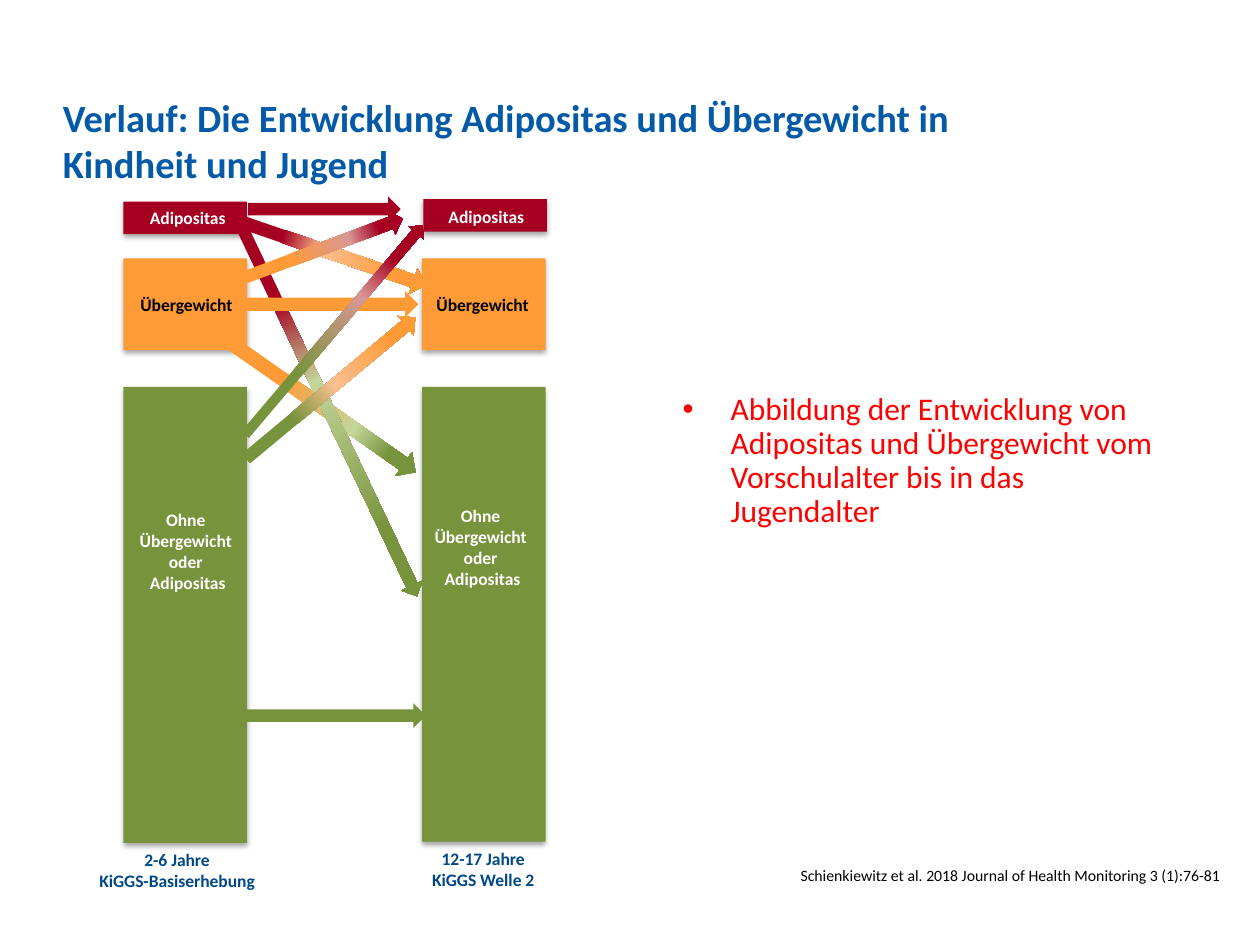
from dataclasses import dataclass

from lxml.etree import SubElement
from pptx import Presentation
from pptx.dml.color import RGBColor
from pptx.enum.shapes import MSO_SHAPE
from pptx.enum.text import MSO_ANCHOR, PP_ALIGN
from pptx.oxml.ns import qn
from pptx.shapes.autoshape import Shape
from pptx.slide import Slide
from pptx.util import Inches, Length, Pt

COLOURS = {
    "red": "A50021",
    "orange": "FF9B37",
    "green": "77933C",
    "pale_red": "D99694",
    "pale_orange": "FAC090",
    "pale_green": "C3D69B",
    "title": "045AA6",
    "caption": "024888",
    "statement": "FF0000",
    "white": "FFFFFF",
    "black": "000000",
}
COLUMNS, ROWS = 100, 75
SLIDE_WIDTH, SLIDE_HEIGHT = Inches(10), Inches(7.5)
BLOCK_WIDTH = 9.8
LABEL_WIDTH = 9.6


@dataclass(frozen=True)
class Area:
    column: float
    row: float
    columns: float
    rows: float

    def lengths(self) -> tuple[Length, ...]:
        unit_x, unit_y = SLIDE_WIDTH / COLUMNS, SLIDE_HEIGHT / ROWS
        return (
            Length(round(self.column * unit_x)),
            Length(round(self.row * unit_y)),
            Length(round(self.columns * unit_x)),
            Length(round(self.rows * unit_y)),
        )


@dataclass(frozen=True)
class Block:
    area: Area
    colour: str


@dataclass(frozen=True)
class Text:
    area: Area
    lines: tuple[str, ...]
    colour: str
    size: float = 10
    bold: bool = True
    wrap: bool = True
    anchor: MSO_ANCHOR = MSO_ANCHOR.TOP
    alignment: PP_ALIGN = PP_ALIGN.CENTER


@dataclass(frozen=True)
class Arrow:
    area: Area
    stops: tuple[tuple[int, str], ...]
    rotation: float = 0


def block(column: float, row: float, rows: float, colour: str) -> Block:
    return Block(Area(column, row, BLOCK_WIDTH, rows), colour)


def label(column: float, row: float, rows: float, lines: tuple[str, ...], colour: str) -> Text:
    area = Area(column, row, LABEL_WIDTH, rows)
    return Text(area, lines, colour, wrap=False, anchor=MSO_ANCHOR.MIDDLE)


HEALTHY = ("Ohne ", "Übergewicht ", "oder ", "Adipositas")

BLOCKS = (
    block(9.8, 16, 2.6, "red"),
    block(9.8, 20.5, 7.3, "orange"),
    block(9.8, 30.7, 36.2, "green"),
    block(33.6, 15.8, 2.6, "red"),
    block(33.5, 20.5, 7.3, "orange"),
    block(33.5, 30.7, 36.1, "green"),
)

LABELS = (
    label(10.1, 15.7, 3.1, ("Adipositas",), "white"),
    label(10, 22.6, 3.1, ("Übergewicht",), "black"),
    label(10.1, 39.8, 7.8, HEALTHY, "white"),
    label(33.8, 15.6, 3.1, ("Adipositas",), "white"),
    label(33.5, 21.2, 6, ("Übergewicht",), "black"),
    label(33.5, 39.5, 7.8, HEALTHY, "white"),
    Text(Area(6.7, 66.9, 14.7, 4.4), ("2-6 Jahre", "KiGGS-Basiserhebung"), "caption"),
    Text(Area(31.7, 66.8, 13.3, 4.4), ("12-17 Jahre", "KiGGS Welle 2"), "caption"),
)

ARROWS = (
    Arrow(Area(16.7, 31.2, 17.9, 2.3), ((30, "orange"), (65, "pale_green"), (82, "green")), 35),
    Arrow(Area(19.7, 15.6, 12.1, 2), ((0, "red"),)),
    Arrow(Area(9.1, 31.2, 33.6, 1.9), ((24, "red"), (44, "pale_green"), (82, "green")), 64.6),
    Arrow(Area(18.8, 19.1, 15.4, 2.1), ((24, "red"), (44, "pale_orange"), (82, "orange")), 19),
    Arrow(Area(18.9, 18.7, 13.5, 2), ((30, "orange"), (65, "pale_red"), (82, "red")), -20.5),
    Arrow(Area(19.4, 23.1, 13.8, 2.1), ((0, "orange"),)),
    Arrow(Area(19.4, 55.8, 14.4, 2), ((0, "green"),)),
    Arrow(Area(17.5, 29.8, 17.5, 2), ((30, "green"), (52, "pale_orange"), (82, "orange")), -39.8),
    Arrow(Area(15.6, 25.4, 21.8, 1.6), ((30, "green"), (65, "pale_red"), (82, "red")), -49.7),
)

TITLE = Text(
    Area(5, 6.3, 78.4, 9.6),
    ("Verlauf: Die Entwicklung Adipositas und Übergewicht in Kindheit und Jugend",),
    "title", 22, anchor=MSO_ANCHOR.MIDDLE, alignment=PP_ALIGN.LEFT,
)
SOURCE = Text(
    Area(60.4, 68.2, 37.4, 2.5),
    ("Schienkiewitz et al. 2018 Journal of Health Monitoring 3 (1):76-81",),
    "black", 9, False, alignment=PP_ALIGN.RIGHT,
)
STATEMENT = Text(
    Area(53.2, 30.7, 39.9, 16.3),
    ("Abbildung der Entwicklung von Adipositas und Übergewicht vom "
     "Vorschulalter bis in das Jugendalter",),
    "statement", 18, False, alignment=PP_ALIGN.LEFT,
)


def draw_shape(slide: Slide, kind: MSO_SHAPE, area: Area) -> Shape:
    shape = slide.shapes.add_shape(kind, *area.lengths())
    shape.shadow.inherit = False
    shape.line.fill.background()
    return shape


def fill_solid(shape: Shape, colour: str) -> None:
    shape.fill.solid()
    shape.fill.fore_color.rgb = RGBColor.from_string(COLOURS[colour])


def fill_gradient(shape: Shape, stops: tuple[tuple[int, str], ...]) -> None:
    shape.fill.gradient()
    shape.fill.gradient_angle = 0
    stop_list = next(shape._element.spPr.iter(qn("a:gsLst")))
    stop_list.clear()
    for position, colour in stops:
        stop = SubElement(stop_list, qn("a:gs"), pos=str(position * 1000))
        SubElement(stop, qn("a:srgbClr"), val=COLOURS[colour])


def draw_block(slide: Slide, item: Block) -> None:
    shape = draw_shape(slide, MSO_SHAPE.RECTANGLE, item.area)
    fill_solid(shape, item.colour)
    effects = shape._element.spPr.find(qn("a:effectLst"))
    shadow = SubElement(
        effects, qn("a:outerShdw"), blurRad=str(Pt(3.1)), dist=str(Pt(1.8)),
        dir="5400000", rotWithShape="0",
    )
    colour = SubElement(shadow, qn("a:srgbClr"), val=COLOURS["black"])
    SubElement(colour, qn("a:alpha"), val="35000")


def draw_arrow(slide: Slide, item: Arrow) -> None:
    shape = draw_shape(slide, MSO_SHAPE.RIGHT_ARROW, item.area)
    shape.rotation = item.rotation
    if len(item.stops) == 1:
        fill_solid(shape, item.stops[0][1])
    else:
        fill_gradient(shape, item.stops)


def draw_text(slide: Slide, item: Text) -> Shape:
    shape = slide.shapes.add_textbox(*item.area.lengths())
    frame = shape.text_frame
    frame.word_wrap = item.wrap
    frame.vertical_anchor = item.anchor
    for index, line in enumerate(item.lines):
        paragraph = frame.add_paragraph() if index else frame.paragraphs[0]
        paragraph.alignment = item.alignment
        run = paragraph.add_run()
        run.text = line
        run.font.name = "Calibri"
        run.font.size = Pt(item.size)
        run.font.bold = item.bold
        run.font.color.rgb = RGBColor.from_string(COLOURS[item.colour])
    return shape


def draw_title(slide: Slide) -> None:
    frame = draw_text(slide, TITLE).text_frame
    frame.margin_left = frame.margin_right = frame.margin_top = frame.margin_bottom = 0


def draw_statement(slide: Slide) -> None:
    paragraph = draw_text(slide, STATEMENT).text_frame.paragraphs[0]
    paragraph.line_spacing = 0.9
    properties = paragraph._p.get_or_add_pPr()
    properties.set("marL", str(Inches(0.38)))
    properties.set("indent", str(-Inches(0.38)))
    SubElement(properties, qn("a:buFont"), typeface="Arial")
    SubElement(properties, qn("a:buChar"), char="•")


def main() -> None:
    presentation = Presentation()
    presentation.slide_width, presentation.slide_height = SLIDE_WIDTH, SLIDE_HEIGHT
    slide = presentation.slides.add_slide(presentation.slide_layouts[6])
    draw_title(slide)
    for item in BLOCKS:
        draw_block(slide, item)
    for item in LABELS:
        draw_text(slide, item)
    for item in ARROWS:
        draw_arrow(slide, item)
    draw_text(slide, SOURCE)
    draw_statement(slide)
    presentation.save("out.pptx")


if __name__ == "__main__":
    main()
